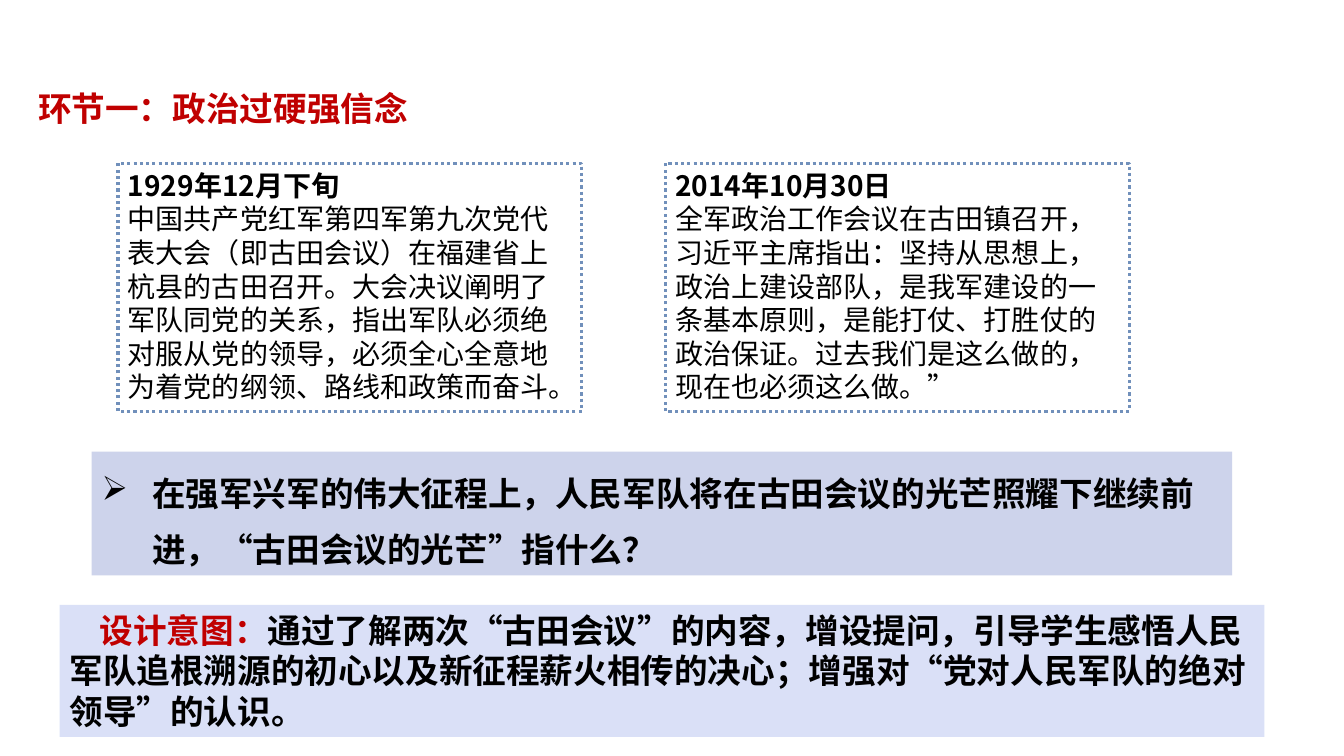
from lxml import etree
from pptx import Presentation
from pptx.dml.color import RGBColor
from pptx.enum.dml import MSO_LINE
from pptx.enum.shapes import MSO_SHAPE
from pptx.enum.text import MSO_ANCHOR, PP_ALIGN
from pptx.oxml.ns import qn
from pptx.util import Inches, Pt

FONT = "Noto Sans CJK SC"
BLACK = RGBColor(0x00, 0x00, 0x00)
RED = RGBColor(0xC0, 0x00, 0x00)
BORDER_BLUE = RGBColor(0x71, 0x90, 0xBB)
QUESTION_FILL = RGBColor(0xCD, 0xD3, 0xEB)
INTENT_FILL = RGBColor(0xDA, 0xE0, 0xF7)

MEETINGS = [
    ("1929年12月下旬",
     "中国共产党红军第四军第九次党代表大会（即古田会议）在福建省上杭县的古田召开。"
     "大会决议阐明了军队同党的关系，指出军队必须绝对服从党的领导，"
     "必须全心全意地为着党的纲领、路线和政策而奋斗。"),
    ("2014年10月30日",
     "全军政治工作会议在古田镇召开，习近平主席指出：坚持从思想上，政治上建设部队，"
     "是我军建设的一条基本原则，是能打仗、打胜仗的政治保证。"
     "过去我们是这么做的，现在也必须这么做。”"),
]
QUESTION = "在强军兴军的伟大征程上，人民军队将在古田会议的光芒照耀下继续前进，“古田会议的光芒”指什么？"
INTENT_LABEL = "设计意图："
INTENT = ("通过了解两次“古田会议”的内容，增设提问，引导学生感悟人民军队追根溯源的初心"
          "以及新征程薪火相传的决心；增强对“党对人民军队的绝对领导”的认识。")


def add_panel(page, left, top, width, height, fill=None):
    """Add a rectangle, filled or with a dotted border, and return its text frame."""
    panel = page.shapes.add_shape(MSO_SHAPE.RECTANGLE, Inches(left), Inches(top),
                                  Inches(width), Inches(height))
    panel.shadow.inherit = False
    if fill is None:
        panel.fill.background()
        panel.line.color.rgb = BORDER_BLUE
        panel.line.width = Pt(2.25)
        panel.line.dash_style = MSO_LINE.ROUND_DOT
    else:
        panel.fill.solid()
        panel.fill.fore_color.rgb = fill
        panel.line.fill.background()
    frame = panel.text_frame
    frame.word_wrap = True
    frame.vertical_anchor = MSO_ANCHOR.TOP
    return frame


def style_paragraph(para, size, color=BLACK, bold=True):
    para.alignment = PP_ALIGN.LEFT
    font = para.font
    font.name = FONT
    font.size = Pt(size)
    font.bold = bold
    font.color.rgb = color
    etree.SubElement(font._element, qn("a:ea"), typeface=FONT)


def set_indent(para, margin, first_line):
    properties = para._p.get_or_add_pPr()
    properties.set("marL", str(Inches(margin)))
    properties.set("indent", str(Inches(first_line)))
    return properties


def add_heading(page):
    box = page.shapes.add_textbox(Inches(0.28), Inches(0.82), Inches(5.78), Inches(0.5))
    box.text_frame.word_wrap = True
    para = box.text_frame.paragraphs[0]
    para.text = "环节一：政治过硬强信念"
    style_paragraph(para, 24, RED)


def add_meeting(page, left, date, summary):
    frame = add_panel(page, left, 1.62, 4.6, 2.46)
    frame.text = f"{date}\n{summary}"
    date_para, summary_para = frame.paragraphs
    style_paragraph(date_para, 20)
    style_paragraph(summary_para, 20, bold=False)


def add_question(page):
    para = add_panel(page, 0.91, 4.48, 11.31, 1.23, QUESTION_FILL).paragraphs[0]
    para.text = QUESTION
    properties = set_indent(para, 0.5, -0.5)
    etree.SubElement(properties, qn("a:buChar"), char="➢")
    para.line_spacing = 1.4
    style_paragraph(para, 24)


def add_intent(page):
    para = add_panel(page, 0.59, 6, 11.95, 1.31, INTENT_FILL).paragraphs[0]
    set_indent(para, 0, 0.3)
    style_paragraph(para, 24)
    for text, color in ((INTENT_LABEL, RED), (INTENT, BLACK)):
        span = para.add_run()
        span.text = text
        span.font.color.rgb = color


def main():
    deck = Presentation()
    deck.slide_width = Inches(13.33)
    deck.slide_height = Inches(7.5)
    page = deck.slides.add_slide(deck.slide_layouts[6])
    add_heading(page)
    add_question(page)
    for index, (date, summary) in enumerate(MEETINGS):
        add_meeting(page, 1.17 + index * 5.43, date, summary)
    add_intent(page)
    deck.save("out.pptx")


if __name__ == "__main__":
    main()
